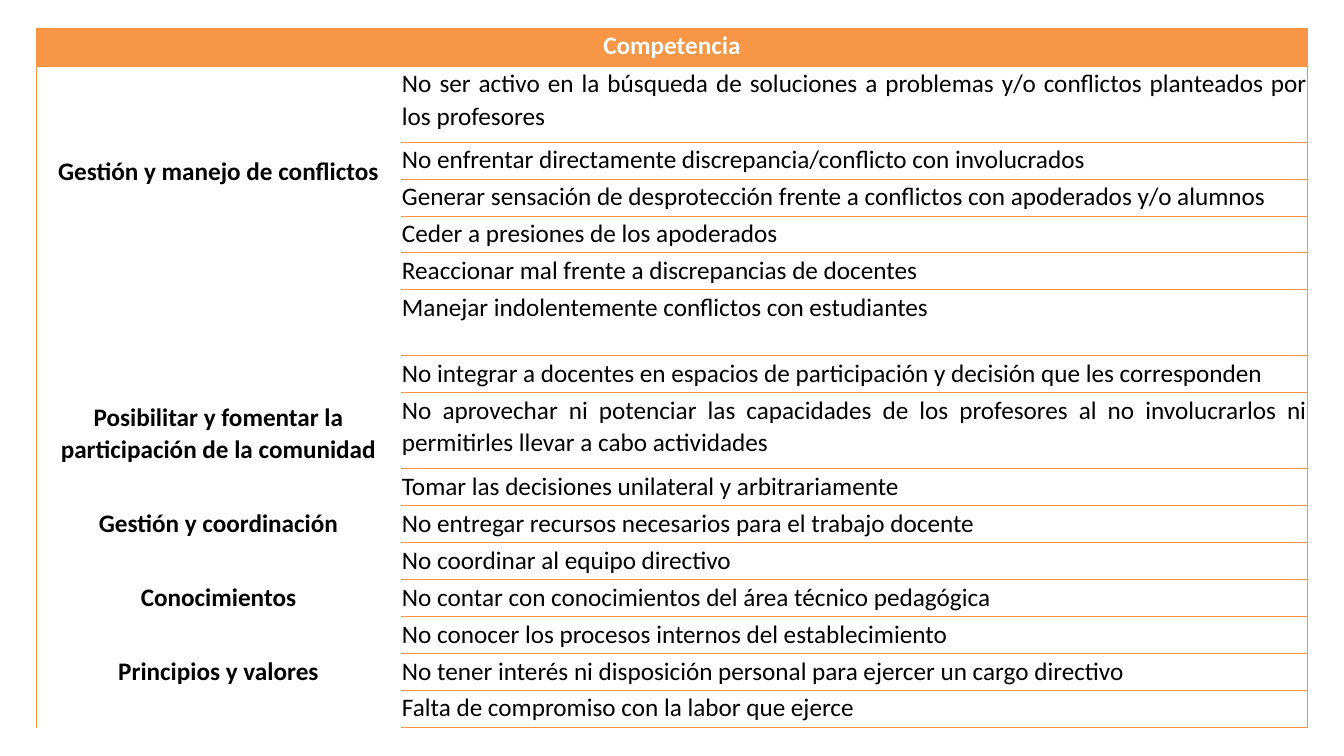
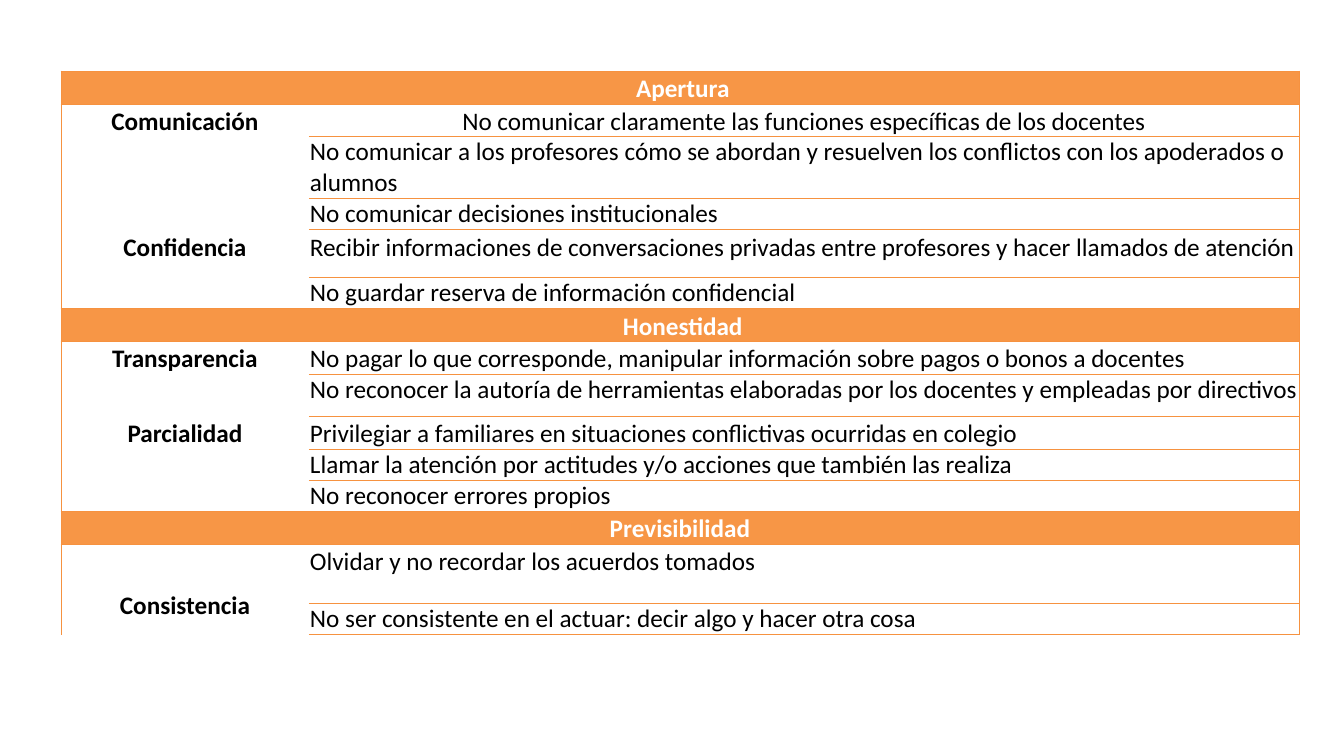
import pptx
import pptx.dml.color
import pptx.enum.text
import pptx.oxml
import pptx.oxml.ns
import pptx.util
from dataclasses import dataclass

SCALE = 914400 / 100.8
FONT = "Calibri"
ORANGE = "F79646"
RULE = "F69240"
BLACK = "000000"
WHITE = "FFFFFF"
PLAIN_STYLE = "{2D5ABB26-0587-4C30-8999-92F81FD0307C}"
SPACING = 1.07
ALIGN = pptx.enum.text.PP_ALIGN


@dataclass
class Group:
    label: str
    items: list
    lead: int = 0
    closed: bool = True
    first_align: object = None


@dataclass
class Section:
    title: str
    height: int
    groups: list


COMPETENCE = [
    Section("Competencia", 38, [
        Group("Gestión y manejo de conflictos", [
            (76, "No ser activo en la búsqueda de soluciones a problemas y/o conflictos planteados por los profesores"),
            (37, "No enfrentar directamente discrepancia/conflicto con involucrados"),
            (37, "Generar sensación de desprotección frente a conflictos con apoderados y/o alumnos"),
            (37, "Ceder a presiones de los apoderados"),
            (37, "Reaccionar mal frente a discrepancias de docentes"),
            (66, "Manejar indolentemente conflictos con estudiantes"),
        ], lead=88),
        Group("Posibilitar y fomentar la participación de la comunidad", [
            (37, "No integrar a docentes en espacios de participación y decisión que les corresponden"),
            (76, "No aprovechar ni potenciar las capacidades de los profesores al no involucrarlos ni permitirles llevar a cabo actividades"),
            (37, "Tomar las decisiones unilateral y arbitrariamente"),
        ], lead=44),
        Group("Gestión y coordinación", [
            (37, "No entregar recursos necesarios para el trabajo docente"),
            (37, "No coordinar al equipo directivo"),
        ], closed=False),
        Group("Conocimientos", [
            (37, "No contar con conocimientos del área técnico pedagógica"),
            (37, "No conocer los procesos internos del establecimiento"),
        ], closed=False),
        Group("Principios y valores", [
            (37, "No tener interés ni disposición personal para ejercer un cargo directivo"),
            (37, "Falta de compromiso con la labor que ejerce"),
        ]),
    ]),
]

TRUST = [
    Section(" Apertura", 33, [
        Group("Comunicación", [
            (32, "No comunicar claramente las funciones específicas de los docentes"),
            (62, "No comunicar a los profesores cómo se abordan y resuelven los conflictos con los apoderados o alumnos"),
            (31, "No comunicar decisiones institucionales"),
        ], first_align=ALIGN.CENTER),
        Group("Confidencia", [
            (48, "Recibir informaciones de conversaciones privadas entre profesores y hacer llamados de atención"),
            (31, "No guardar reserva de información confidencial"),
        ]),
    ]),
    Section(" Honestidad", 33, [
        Group("Transparencia", [
            (33, "No pagar lo que corresponde, manipular información sobre pagos o bonos a docentes"),
            (42, "No reconocer la autoría de herramientas elaboradas por los docentes y empleadas por directivos"),
        ]),
        Group("Parcialidad", [
            (33, "Privilegiar a familiares en situaciones conflictivas ocurridas en colegio"),
            (31, "Llamar la atención por actitudes y/o acciones que también las realiza"),
            (31, "No reconocer errores propios"),
        ]),
    ]),
    Section("Previsibilidad", 33, [
        Group("Consistencia", [
            (59, "Olvidar y no recordar los acuerdos tomados"),
            (31, "No ser consistente en el actuar: decir algo y hacer otra cosa"),
        ], lead=44),
    ]),
]


def px(length):
    return pptx.util.Emu(round(length * SCALE))


def color(value):
    return pptx.dml.color.RGBColor.from_string(value)


def set_borders(cell, sides):
    properties = cell._tc.get_or_add_tcPr()
    for side in sides:
        properties.append(pptx.oxml.parse_xml(
            f'<a:ln{side} {pptx.oxml.ns.nsdecls("a")} w="9525">'
            f'<a:solidFill><a:srgbClr val="{RULE}"/></a:solidFill></a:ln{side}>'))


def write_cell(cell, text, align, ink=BLACK, bold=False, spacing=SPACING, lead=0):
    cell.margin_left = cell.margin_right = px(1)
    cell.margin_top = px(lead)
    cell.margin_bottom = 0
    para = cell.text_frame.paragraphs[0]
    para.text = text
    para.alignment = align
    para.line_spacing = spacing
    para.font.name = FONT
    para.font.size = pptx.util.Pt(18)
    para.font.bold = bold
    para.font.color.rgb = color(ink)


def add_header(table, row, title):
    for column in range(2):
        cell = table.cell(row, column)
        set_borders(cell, "LRTB")
        cell.fill.solid()
        cell.fill.fore_color.rgb = color(ORANGE)
    table.cell(row, 0).merge(table.cell(row, 1))
    write_cell(table.cell(row, 0), title, ALIGN.CENTER, ink=WHITE, bold=True)


def add_group(table, row, group, align, rest_spacing):
    last = row + len(group.items) - 1
    for index, (height, text) in enumerate(group.items):
        current = row + index
        label_sides = "LB" if group.closed and current == last else "L"
        set_borders(table.cell(current, 0), label_sides)
        cell = table.cell(current, 1)
        set_borders(cell, "RTB")
        if index == 0:
            write_cell(cell, text, group.first_align or align)
        else:
            write_cell(cell, text, align, spacing=rest_spacing)
    table.cell(row, 0).merge(table.cell(last, 0))
    write_cell(table.cell(row, 0), group.label, ALIGN.CENTER, bold=True, lead=group.lead)


def row_heights(sections):
    heights = []
    for section in sections:
        heights.append(section.height)
        heights.extend(height for group in section.groups for height, text in group.items)
    return heights


def add_page(deck, sections, left, top, widths, align, rest_spacing):
    page = deck.slides.add_slide(deck.slide_layouts[6])
    heights = row_heights(sections)
    frame = page.shapes.add_table(
        len(heights), 2, px(left), px(top), px(sum(widths)), px(sum(heights)))
    table = frame.table
    table._tbl.tblPr.find(pptx.oxml.ns.qn("a:tableStyleId")).text = PLAIN_STYLE
    table.horz_banding = False
    for column, width in zip(table.columns, widths):
        column.width = px(width)
    for line, height in zip(table.rows, heights):
        line.height = px(height)
    row = 0
    for section in sections:
        add_header(table, row, section.title)
        row += 1
        for group in section.groups:
            add_group(table, row, group, align, rest_spacing)
            row += len(group.items)


def main():
    deck = pptx.Presentation()
    deck.slide_width = px(1344)
    deck.slide_height = px(756)
    add_page(deck, COMPETENCE, 36, 28, (365, 907), ALIGN.JUSTIFY, SPACING)
    add_page(deck, TRUST, 61, 71, (248, 990), ALIGN.LEFT, 1.0)
    deck.save("out.pptx")


if __name__ == "__main__":
    main()
